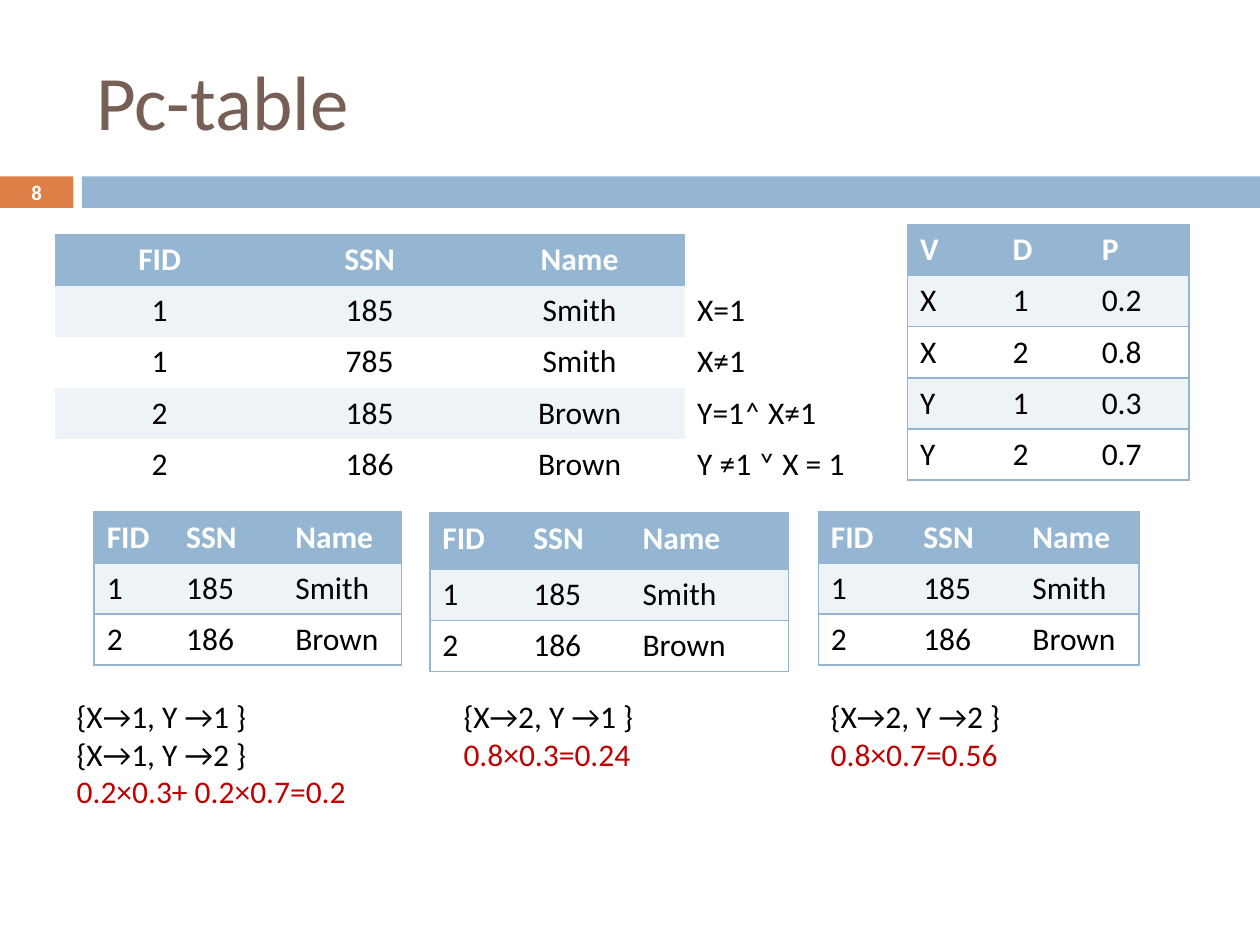
import pptx
import pptx.util
import pptx.dml.color
import pptx.enum.shapes
import pptx.enum.text
import pptx.oxml
import pptx.oxml.ns

Pt = pptx.util.Pt
RGB = pptx.dml.color.RGBColor
ALIGN = pptx.enum.text.PP_ALIGN
MID = pptx.enum.text.MSO_ANCHOR.MIDDLE

BLUE = RGB(0x94, 0xB6, 0xD2)
PALE = RGB(0xEE, 0xF3, 0xF7)
WHITE = RGB(0xFF, 0xFF, 0xFF)
BLACK = RGB(0, 0, 0)
BROWN = RGB(0x77, 0x5F, 0x55)
ORANGE = RGB(0xDD, 0x80, 0x47)
RED = RGB(0xC0, 0, 0)

PLAIN = "{2D5ABB26-0587-4C30-8999-92F81FD0307C}"  # no style, no grid
ROW = 29.2


def write(para, text, color, size=18, bold=False, align=ALIGN.LEFT):
    para.alignment = align
    run = para.add_run()
    run.text = text
    form = {"name": "Calibri", "size": Pt(size), "bold": bold}
    for key, value in form.items():
        setattr(run.font, key, value)
    run.font.color.rgb = color


def add_text(slide, box, lines, anchor=None, **form):
    """Write (text, color) lines into a text box."""
    frame = slide.shapes.add_textbox(*map(Pt, box)).text_frame
    frame.word_wrap = True
    frame.vertical_anchor = anchor
    for i, (text, color) in enumerate(lines):
        para = frame.add_paragraph() if i else frame.paragraphs[0]
        write(para, text, color, **form)


def add_bar(slide, box, color):
    bar = slide.shapes.add_shape(
        pptx.enum.shapes.MSO_SHAPE.RECTANGLE, *map(Pt, box))
    bar.shadow.inherit = False
    bar.fill.solid()
    bar.fill.fore_color.rgb = color
    bar.line.fill.background()


def add_head(slide, left, top, width):
    """Title, with the number block and band below it."""
    band, block = top + 82.8, 42
    add_bar(slide, (left, band, block, 18), ORANGE)
    add_bar(slide, (left + 46.8, band, width - 46.8, 18), BLUE)
    add_text(slide, (left + 48, top, 642, 78), [("Pc-table", BROWN)],
             MID, size=44)
    add_text(slide, (left, band - 0.7, block, 19.4), [("8", WHITE)],
             MID, size=11.9, bold=True, align=ALIGN.CENTER)


def add_edge(cell, side):
    cell._tc.get_or_add_tcPr().append(pptx.oxml.parse_xml(
        f'<a:ln{side} {pptx.oxml.ns.nsdecls("a")} w="12700"><a:solidFill>'
        f'<a:srgbClr val="{BLUE}"/></a:solidFill></a:ln{side}>'))


def add_grid(slide, left, top, cols, rows, head=ROW, ruled=True, notes=False):
    """Banded table; notes leaves the last column open and unfilled."""
    highs = [head] + [ROW] * (len(rows) - 1)
    table = slide.shapes.add_table(
        len(rows), len(cols),
        *map(Pt, (left, top, sum(cols), sum(highs)))).table
    table._tbl.tblPr.find(pptx.oxml.ns.qn("a:tableStyleId")).text = PLAIN
    for col, width in zip(table.columns, cols):
        col.width = Pt(width)
    last = len(cols) - 1
    for r, (row, high) in enumerate(zip(rows, highs)):
        table.rows[r].height = Pt(high)
        for c, text in enumerate(row):
            cell = table.cell(r, c)
            if ruled:
                sides = "L" * (c == 0) + "R" * (c == last) + "TB"
                for side in sides:
                    add_edge(cell, side)
            if notes and c == last:
                cell.fill.background()
            else:
                cell.fill.solid()
                cell.fill.fore_color.rgb = (
                    BLUE if r == 0 else PALE if r % 2 else WHITE)
            if text:
                middle = notes and c < last
                write(cell.text_frame.paragraphs[0], text,
                      BLACK if r else WHITE, bold=r == 0,
                      align=ALIGN.CENTER if middle else ALIGN.LEFT)


def add_world(slide, left, top, cols, label, maps, odds, head=ROW):
    """One possible world: its table, its valuations and its probability."""
    add_grid(slide, left, top, cols, WORLD, head)
    lines = [(text, BLACK) for text in maps] + [(odds, RED)]
    add_text(slide, (label, 394.6, 196.6, 22 * len(lines) + 7), lines)


FIELDS = ("FID", "SSN", "Name")
WORLD = [FIELDS, ("1", "185", "Smith"), ("2", "186", "Brown")]
FACTS = [
    FIELDS + ("",),
    ("1", "185", "Smith", "X=1"),
    ("1", "785", "Smith", "X≠1"),
    ("2", "185", "Brown", "Y=1˄ X≠1"),
    ("2", "186", "Brown", "Y ≠1 ˅ X = 1"),
]
ODDS = [
    ("V", "D", "P"),
    ("X", "1", "0.2"),
    ("X", "2", "0.8"),
    ("Y", "1", "0.3"),
    ("Y", "2", "0.7"),
]


def main():
    deck = pptx.Presentation()
    deck.slide_width, deck.slide_height = Pt(720), Pt(540)
    slide = deck.slides.add_slide(deck.slide_layouts[6])

    add_head(slide, 0, 18, 720)

    # Conditional facts and variable probabilities
    add_grid(slide, 31.2, 134, [120] * 4, FACTS, ruled=False, notes=True)
    add_grid(slide, 518.6, 128.3, [52.8, 51, 57], ODDS)

    # Possible worlds
    add_world(slide, 53.8, 292.4, [45.4, 62.4, 68], 36.7,
              ["{X→1, Y →1 }", "{X→1, Y →2 }"], "0.2×0.3+ 0.2×0.7=0.2")
    add_world(slide, 245.6, 293, [52, 62.4, 90.6], 257.8,
              ["{X→2, Y →1 }"], "0.8×0.3=0.24", head=32.4)
    add_world(slide, 467.6, 292.4, [52.8, 62.4, 68], 467.6,
              ["{X→2, Y →2 }"], "0.8×0.7=0.56")

    deck.save("out.pptx")


if __name__ == "__main__":
    main()
